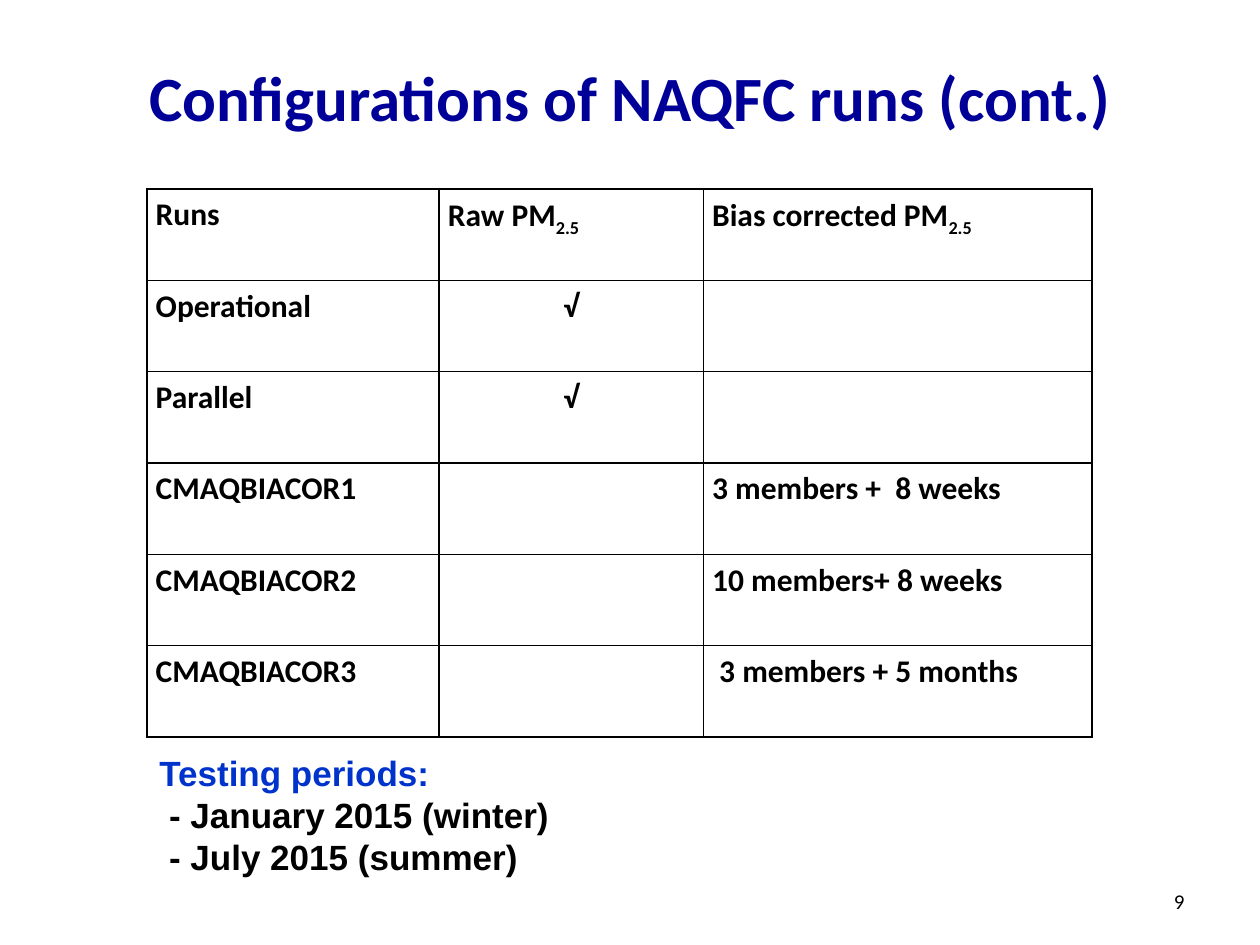
"""Build the slide that lists the NAQFC run configurations."""
from lxml.etree import SubElement
from pptx import Presentation
from pptx.dml.color import RGBColor
from pptx.enum.text import MSO_ANCHOR as ANCHOR, PP_ALIGN as ALIGN
from pptx.oxml.ns import qn
from pptx.util import Pt

COLORS = {"title": "000099", "accent": "0033CC", "text": "000000"}
COLUMNS = [167, 151, 222]
ROWS = [
    ["Runs", "Raw PM|2.5", "Bias corrected PM|2.5"],
    ["Operational", "√", ""],
    ["Parallel", "√", ""],
    ["CMAQBIACOR1", "", "3 members +  8 weeks"],
    ["CMAQBIACOR2", "", "10 members+ 8 weeks"],
    ["CMAQBIACOR3", "", " 3 members + 5 months"],
]


class Deck:
    def __init__(self, prs):
        self.slide = prs.slides.add_slide(prs.slide_layouts[5])

    def style(self, r, size, color="text", bold=True, font="Calibri"):
        r.font.name, r.font.size, r.font.bold = font, Pt(size), bold
        r.font.color.rgb = RGBColor.from_string(COLORS[color])

    def title(self, text, x, y, w, h):
        sp = self.slide.shapes.title
        sp.left, sp.top, sp.width, sp.height = Pt(x), Pt(y), Pt(w), Pt(h)
        tf = sp.text_frame
        tf.text = text
        tf.vertical_anchor = ANCHOR.TOP
        p = tf.paragraphs[0]
        p.alignment = ALIGN.CENTER
        self.style(p.runs[0], 36, "title")

    def text(self, lines, x, y, w, h, size, bold=True, font="Calibri",
             align=ALIGN.LEFT, anchor=ANCHOR.TOP):
        sp = self.slide.shapes.add_textbox(Pt(x), Pt(y), Pt(w), Pt(h))
        tf = sp.text_frame
        tf.word_wrap = True
        tf.vertical_anchor = anchor
        tf.text = "\n".join(line for line, _ in lines)
        for p, (_, color) in zip(tf.paragraphs, lines):
            p.alignment = align
            self.style(p.runs[0], size, color, bold, font)

    def border(self, cell):
        tc_pr = cell._tc.get_or_add_tcPr()
        for i, side in enumerate(("a:lnL", "a:lnR", "a:lnT", "a:lnB")):
            ln = tc_pr.makeelement(qn(side), {"w": str(Pt(1))})
            fill = SubElement(ln, qn("a:solidFill"))
            SubElement(fill, qn("a:srgbClr"), val=COLORS["text"])
            tc_pr.insert(i, ln)

    def cell(self, cell, text):
        cell.fill.background()
        self.border(cell)
        cell.margin_left = cell.margin_right = Pt(5)
        cell.margin_top, cell.margin_bottom = Pt(0.7), Pt(0)
        p = cell.text_frame.paragraphs[0]
        p.line_spacing, p.space_after = 1.15, Pt(10)
        if text == "√":
            p.alignment = ALIGN.CENTER
        base, _, sub = text.partition("|")
        for part in filter(None, (base, sub)):
            r = p.add_run()
            r.text = part
            self.style(r, 18)
            if part == sub:
                r._r.get_or_add_rPr().set("baseline", "-25000")

    def table(self, rows, columns, x, y, row_h):
        frame = self.slide.shapes.add_table(
            len(rows), len(columns), Pt(x), Pt(y),
            Pt(sum(columns)), Pt(row_h * len(rows)))
        table = frame.table
        table.first_row = table.horz_banding = False
        for column, width in zip(table.columns, columns):
            column.width = Pt(width)
        for row, texts in zip(table.rows, rows):
            row.height = Pt(row_h)
            for cell, text in zip(row.cells, texts):
                self.cell(cell, text)


def main():
    prs = Presentation()
    prs.slide_width, prs.slide_height = Pt(720), Pt(540)
    deck = Deck(prs)
    deck.title("Configurations of NAQFC runs (cont.)", 36, 30, 648, 90)
    deck.text([("9", "text")], 516, 500.5, 168, 28.75, 12, bold=False,
              align=ALIGN.RIGHT, anchor=ANCHOR.MIDDLE)
    deck.text([("Testing periods:", "accent"),
               (" - January 2015 (winter)", "text"),
               (" - July 2015 (summer)", "text")],
              84, 426, 540, 80, 20, font="Arial")
    deck.table(ROWS, COLUMNS, 84, 108, 52.2)
    prs.save("out.pptx")


if __name__ == "__main__":
    main()
